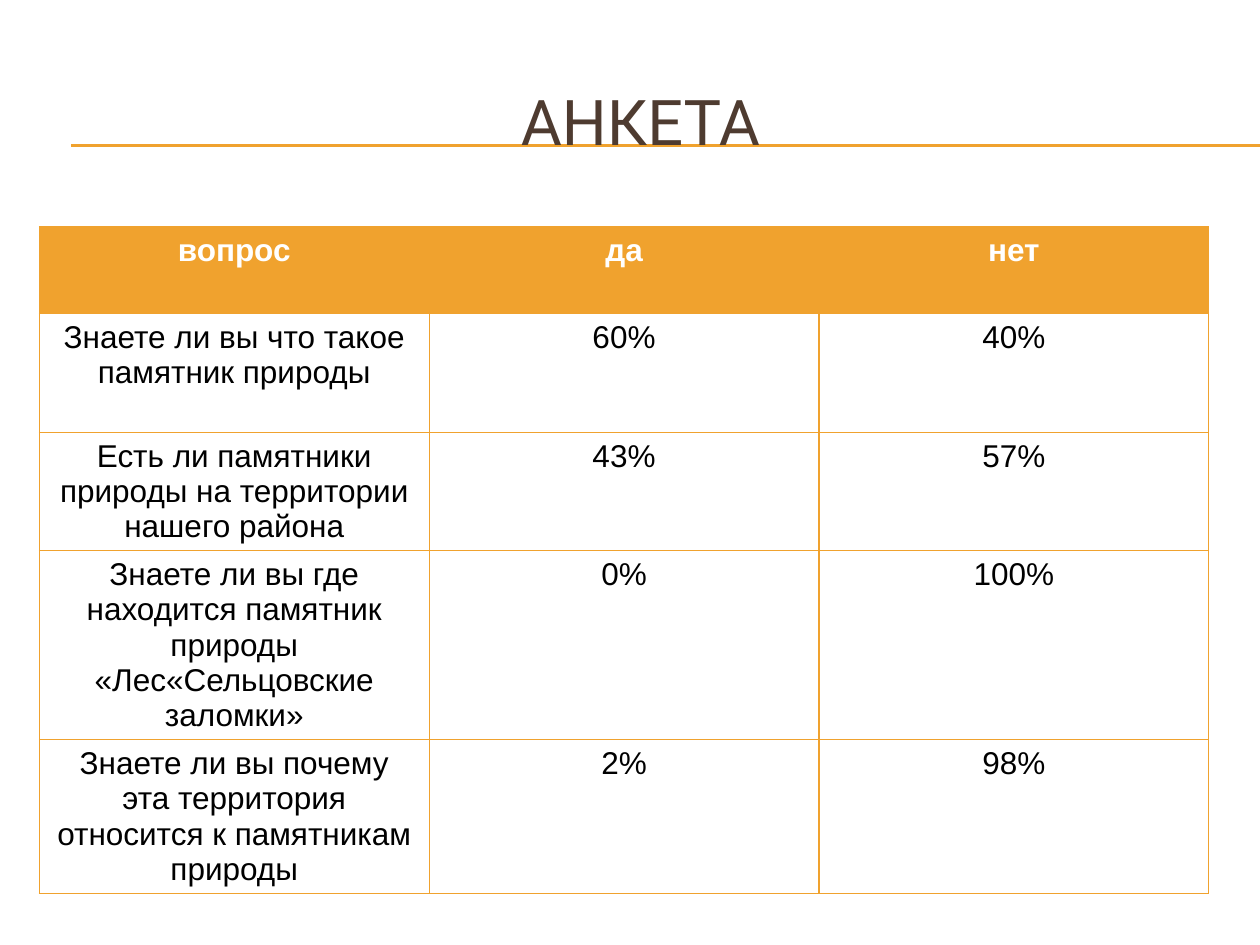
import pptx
import pptx.util
import pptx.dml.color
import pptx.enum.shapes
import pptx.enum.text
import pptx.oxml
import pptx.oxml.ns
import lxml.etree

Pt = pptx.util.Pt
RGBColor = pptx.dml.color.RGBColor
ALIGN = pptx.enum.text.PP_ALIGN
ANCHOR = pptx.enum.text.MSO_ANCHOR
qn = pptx.oxml.ns.qn

ORANGE = RGBColor(0xF0, 0xA2, 0x2E)
BROWN = RGBColor(0x4E, 0x3B, 0x30)
WHITE = RGBColor(0xFF, 0xFF, 0xFF)
BLACK = RGBColor(0, 0, 0)

SLIDE_W, SLIDE_H = 720, 540
BORDER_W = 0.79
ROW_HEIGHTS = [49.7, 67.7, 67.7, 67.7, 67.7]
ROWS = [
    ("вопрос", "да", "нет"),
    ("Знаете ли вы что такое памятник природы", "60%", "40%"),
    ("Есть ли памятники природы на территории нашего района", "43%", "57%"),
    ("Знаете ли вы где находится памятник природы «Лес«Сельцовские заломки»", "0%", "100%"),
    ("Знаете ли вы почему эта территория относится к памятникам природы", "2%", "98%"),
]


def write_text(tf, text, size=18, font="Arial", color=BLACK, bold=False):
    p = tf.paragraphs[0]
    p.alignment = ALIGN.CENTER
    r = p.add_run()
    r.text = text
    r.font.size = Pt(size)
    r.font.name = font
    r.font.bold = bold
    r.font.color.rgb = color


def add_rule(s, x1, x2, y):
    """Draw a thin horizontal line across the slide."""
    line = s.shapes.add_connector(
        pptx.enum.shapes.MSO_CONNECTOR.STRAIGHT, Pt(x1), Pt(y), Pt(x2), Pt(y))
    line.line.color.rgb = ORANGE
    line.line.width = Pt(0.75)
    lxml.etree.SubElement(line._element.spPr, qn("a:effectLst"))


def set_borders(cell):
    tc_pr = cell._tc.get_or_add_tcPr()
    for i, side in enumerate(("lnL", "lnR", "lnT", "lnB")):
        ln = lxml.etree.Element(qn(f"a:{side}"), w=str(Pt(BORDER_W)))
        fill = lxml.etree.SubElement(ln, qn("a:solidFill"))
        lxml.etree.SubElement(fill, qn("a:srgbClr"), val=str(ORANGE))
        tc_pr.insert(i, ln)


def add_title(s, text, x, y, w, h):
    sp = s.shapes.title
    sp.left, sp.top, sp.width, sp.height = Pt(x), Pt(y), Pt(w), Pt(h)
    tf = sp.text_frame
    tf.word_wrap = True
    tf.vertical_anchor = ANCHOR.MIDDLE
    write_text(tf, text, size=36, font="Roboto", color=BROWN)
    # Bring the title in front of the rules
    s.shapes._spTree.append(sp._element)


def add_survey_table(s, x, y, w, h):
    frame = s.shapes.add_table(len(ROWS), len(ROWS[0]), Pt(x), Pt(y), Pt(w), Pt(h))
    table = frame.table
    table.horz_banding = False
    for column in table.columns:
        column.width = Pt(w / len(ROWS[0]))
    for i, (values, height) in enumerate(zip(ROWS, ROW_HEIGHTS)):
        table.rows[i].height = Pt(height)
        header = i == 0
        for j, value in enumerate(values):
            cell = table.cell(i, j)
            cell.fill.solid()
            cell.fill.fore_color.rgb = ORANGE if header else WHITE
            set_borders(cell)
            write_text(cell.text_frame, value, bold=header,
                       color=WHITE if header else BLACK)
    frame.height = Pt(h)


def main():
    prs = pptx.Presentation()
    prs.slide_width, prs.slide_height = Pt(SLIDE_W), Pt(SLIDE_H)
    s = prs.slides.add_slide(prs.slide_layouts[5])
    s.background.fill.solid()
    s.background.fill.fore_color.rgb = WHITE
    for y in (82.8, 83.5):
        add_rule(s, 40.5, SLIDE_W, y)
    add_title(s, "АНКЕТА", 24, 36, 684, 66)
    add_survey_table(s, 22.5, 129.6, 668.2, 376.6)
    prs.save("out.pptx")


if __name__ == "__main__":
    main()
